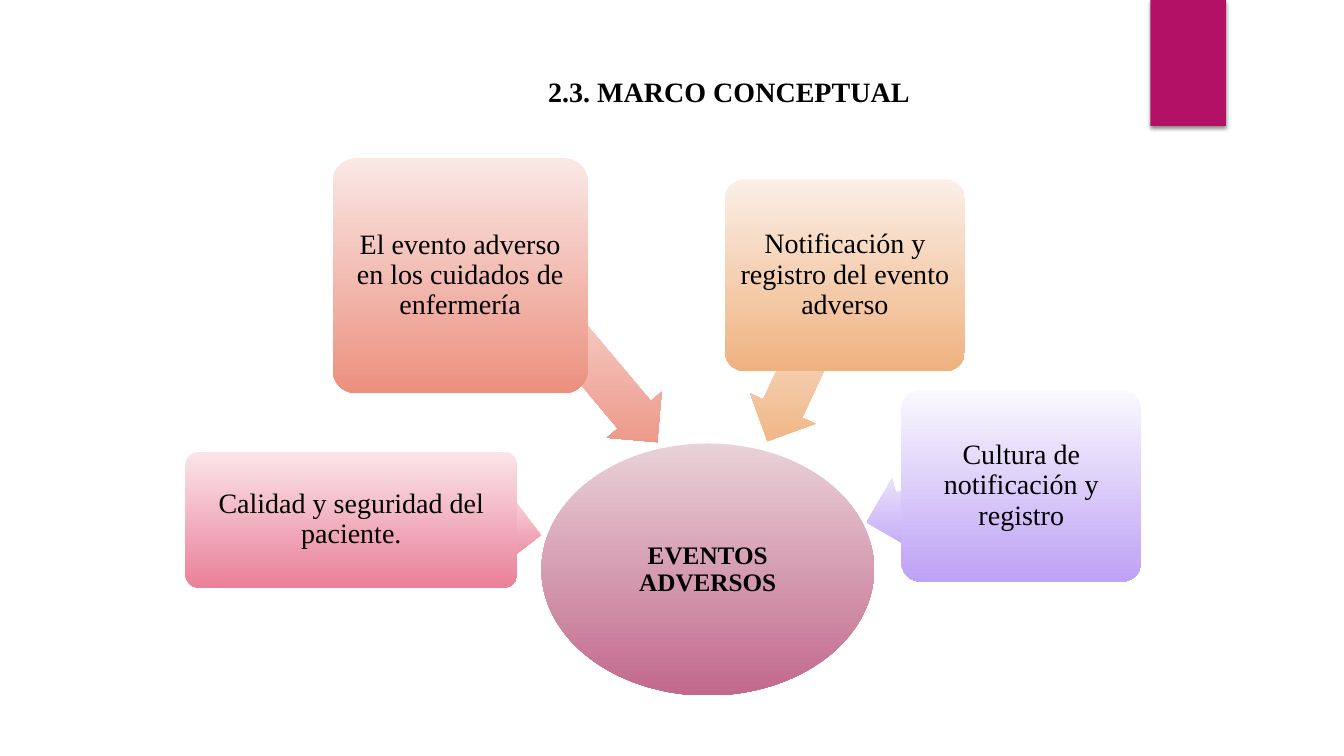
from dataclasses import dataclass
from typing import Optional

import pptx
import pptx.dml.color
import pptx.enum.shapes
import pptx.enum.text
import pptx.oxml
import pptx.oxml.ns
import pptx.util
from pptx.shapes.autoshape import Shape
from pptx.slide import Slide

Inches = pptx.util.Inches
ShapeKind = pptx.enum.shapes.MSO_SHAPE
Anchor = pptx.enum.text.MSO_ANCHOR


@dataclass(frozen=True)
class Theme:
    font: str = "Times New Roman"
    text: str = "000000"
    banner: str = "B31166"
    heading_size: int = 20
    center_size: int = 18
    mauve: tuple[str, str] = ("E9D1D8", "C2698B")
    pink: tuple[str, str] = ("FAE5E9", "EA8099")
    coral: tuple[str, str] = ("FAE8E5", "EB907F")
    orange: tuple[str, str] = ("FBEFE7", "EFB27F")
    violet: tuple[str, str] = ("FAF9FE", "BEA2F6")


@dataclass(frozen=True)
class Box:
    left: float
    top: float
    width: float
    height: float


@dataclass(frozen=True)
class Concept:
    text: str
    card: Box
    arrow: Box
    rotation: float
    colors: tuple[str, str]


THEME = Theme()
ARROW_HEIGHT = 0.71
CONCEPTS = [
    Concept("Calidad y seguridad del paciente.", Box(1.84, 4.48, 3.29, 1.35),
            Box(4.29, 4.88, 1.08, ARROW_HEIGHT), 187.9, THEME.pink),
    Concept("El evento adverso en los cuidados de enfermería", Box(3.3, 1.57, 2.53, 2.33),
            Box(4.63, 3.15, 2.3, ARROW_HEIGHT), 230, THEME.coral),
    Concept("Notificación y registro del evento adverso", Box(7.19, 1.78, 2.38, 1.9),
            Box(7.09, 3.2, 1.81, ARROW_HEIGHT), 295, THEME.orange),
    Concept("Cultura de notificación y registro", Box(8.94, 3.87, 2.38, 1.9),
            Box(8.57, 4.63, 1.52, ARROW_HEIGHT), 345, THEME.violet),
]
BANNER_SHADOW = (
    f'<a:effectLst {pptx.oxml.ns.nsdecls("a")}>'
    '<a:outerShdw blurRad="38100" dist="25400" dir="5400000" rotWithShape="0">'
    '<a:srgbClr val="000000"><a:alpha val="45000"/></a:srgbClr>'
    '</a:outerShdw></a:effectLst>'
)


def rgb(color: str) -> pptx.dml.color.RGBColor:
    return pptx.dml.color.RGBColor.from_string(color)


def add_plain_shape(slide: Slide, kind: ShapeKind, box: Box) -> Shape:
    shape = slide.shapes.add_shape(
        kind, Inches(box.left), Inches(box.top), Inches(box.width), Inches(box.height))
    shape.shadow.inherit = False
    shape.line.fill.background()
    return shape


def add_gradient_shape(slide: Slide, kind: ShapeKind, box: Box, colors: tuple[str, str]) -> Shape:
    shape = add_plain_shape(slide, kind, box)
    shape.fill.gradient()
    shape.fill.gradient_angle = 270
    for stop, position, color in zip(shape.fill.gradient_stops, (0, 1), colors):
        stop.position = position
        stop.color.rgb = rgb(color)
    gradient = shape._element.spPr.find(pptx.oxml.ns.qn("a:gradFill"))
    gradient.set("rotWithShape", "0")
    return shape


def write_text(shape: Shape, text: str, size: int, bold: bool, spacing: float,
               anchor: Anchor, inset: Optional[float] = None) -> None:
    frame = shape.text_frame
    frame.word_wrap = True
    frame.vertical_anchor = anchor
    if inset is not None:
        frame.margin_left = frame.margin_right = Inches(inset)
        frame.margin_top = frame.margin_bottom = Inches(inset)
    paragraph = frame.paragraphs[0]
    paragraph.alignment = pptx.enum.text.PP_ALIGN.CENTER
    paragraph.line_spacing = spacing
    run = paragraph.add_run()
    run.text = text
    run.font.name = THEME.font
    run.font.size = pptx.util.Pt(size)
    run.font.bold = bold
    run.font.color.rgb = rgb(THEME.text)


def add_banner(slide: Slide) -> None:
    banner = add_plain_shape(slide, ShapeKind.RECTANGLE, Box(11.41, 0, 0.75, 1.25))
    banner.fill.solid()
    banner.fill.fore_color.rgb = rgb(THEME.banner)
    properties = banner._element.spPr
    properties.replace(properties.find(pptx.oxml.ns.qn("a:effectLst")),
                       pptx.oxml.parse_xml(BANNER_SHADOW))


def add_title(slide: Slide) -> None:
    title = slide.shapes.title
    title.left, title.top = Inches(4.57), Inches(0.52)
    title.width, title.height = Inches(5.32), Inches(0.61)
    write_text(title, "2.3. MARCO CONCEPTUAL", THEME.heading_size, True, 1.5, Anchor.TOP)
    title.text_frame.auto_size = pptx.enum.text.MSO_AUTO_SIZE.SHAPE_TO_FIT_TEXT


def add_center(slide: Slide) -> None:
    center = add_gradient_shape(slide, ShapeKind.OVAL, Box(5.37, 4.4, 3.3, 2.5), THEME.mauve)
    write_text(center, "EVENTOS ADVERSOS", THEME.center_size, True, 0.9, Anchor.MIDDLE, 0.01)


def add_concept(slide: Slide, concept: Concept) -> None:
    arrow = add_gradient_shape(slide, ShapeKind.LEFT_ARROW, concept.arrow, concept.colors)
    arrow.adjustments[0] = 0.6
    arrow.adjustments[1] = 0.5
    arrow.rotation = concept.rotation
    card = add_gradient_shape(slide, ShapeKind.ROUNDED_RECTANGLE, concept.card, concept.colors)
    card.adjustments[0] = 0.1
    write_text(card, concept.text, THEME.heading_size, False, 0.9, Anchor.MIDDLE, 0.04)


def main() -> None:
    presentation = pptx.Presentation()
    presentation.slide_width = Inches(13.33)
    presentation.slide_height = Inches(7.5)
    slide = presentation.slides.add_slide(presentation.slide_layouts.get_by_name("Title Only"))
    add_banner(slide)
    add_title(slide)
    add_center(slide)
    for concept in CONCEPTS:
        add_concept(slide, concept)
    presentation.save("out.pptx")


if __name__ == "__main__":
    main()
